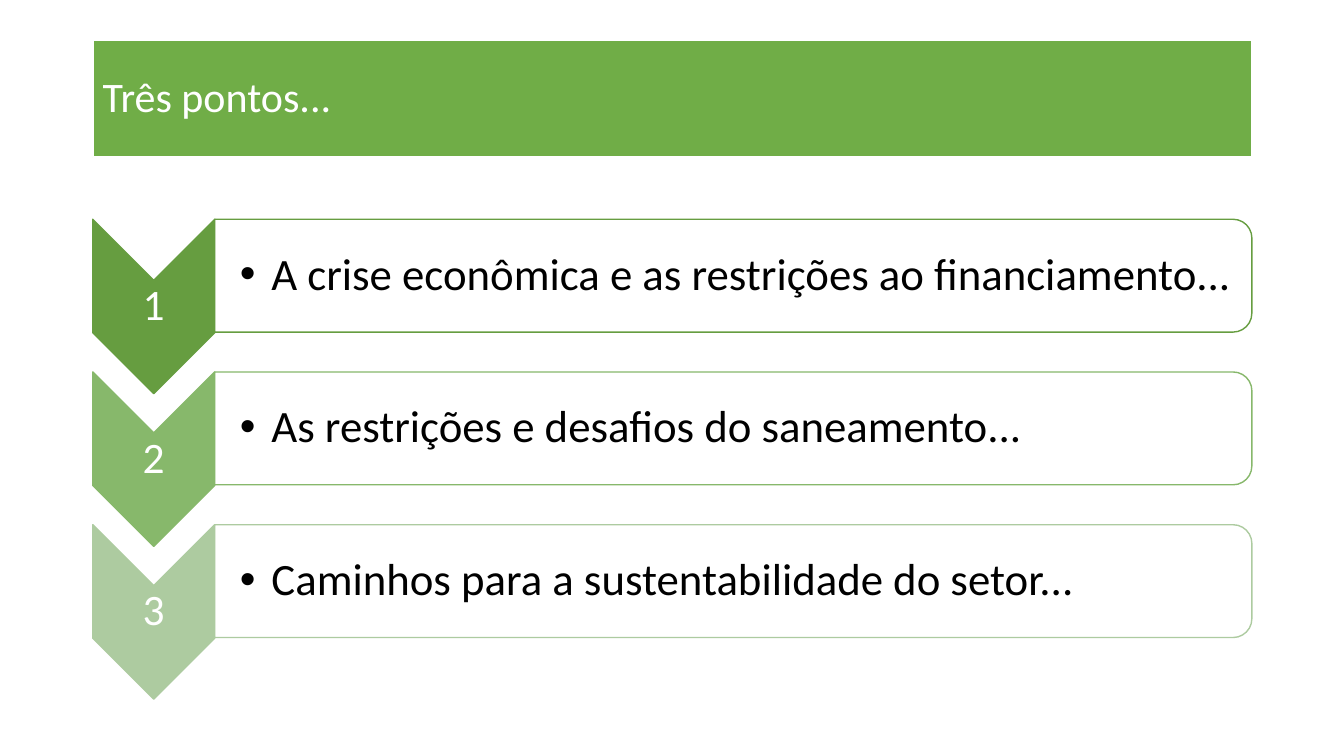
from dataclasses import dataclass

from lxml.etree import SubElement
from pptx import Presentation
from pptx.dml.color import RGBColor
from pptx.enum.shapes import MSO_SHAPE as Preset
from pptx.enum.text import MSO_ANCHOR as Anchor, MSO_AUTO_SIZE as AutoSize, PP_ALIGN as Align
from pptx.oxml.ns import qn
from pptx.util import Pt


@dataclass(frozen=True)
class Theme:
    font: str = "Calibri"
    white: str = "FFFFFF"
    black: str = "000000"
    banner: str = "70AD47"
    steps: tuple = ("669D40", "87B86B", "ADCBA0")
    title_size: int = 30
    number_size: int = 31
    point_size: int = 32
    panel_alpha: int = 90000


THEME = Theme()
TITLE = "Três pontos..."
POINTS = (
    "A crise econômica e as restrições ao financiamento...",
    "As restrições e desafios do saneamento...",
    "Caminhos para a sustentabilidade do setor...",
)
LEFT = 66.2
STEP_WIDTH = 87.2
CHEVRON_LENGTH = 124.6
PANEL_LENGTH = 740.8
PANEL_HEIGHT = 80.6
FIRST_CENTER = 196.9
PITCH = 109.1


def paint(shape, fill, line, width):
    shape.fill.solid()
    shape.fill.fore_color.rgb = RGBColor.from_string(fill)
    shape.line.color.rgb = RGBColor.from_string(line)
    shape.line.width = Pt(width)


def write(shape, text, size, color, align, margins):
    frame = shape.text_frame
    frame.text = text
    frame.word_wrap = True
    frame.auto_size = AutoSize.NONE
    frame.vertical_anchor = Anchor.MIDDLE
    left, top, right, bottom = margins
    frame.margin_left, frame.margin_top = Pt(left), Pt(top)
    frame.margin_right, frame.margin_bottom = Pt(right), Pt(bottom)
    paragraph = frame.paragraphs[0]
    paragraph.alignment = align
    paragraph.line_spacing = 0.9
    font = paragraph.runs[0].font
    font.name = THEME.font
    font.size = Pt(size)
    font.color.rgb = RGBColor.from_string(color)
    return paragraph


def add_bullet(paragraph, indent):
    properties = paragraph._p.get_or_add_pPr()
    properties.set("marL", str(Pt(indent)))
    properties.set("indent", str(-Pt(indent)))
    SubElement(properties, qn("a:buFont"), typeface="Arial")
    SubElement(properties, qn("a:buChar"), char="•")


def add_turned_shape(slide, preset, center_x, center_y, length, breadth, fill, line):
    shape = slide.shapes.add_shape(
        preset, Pt(center_x - length / 2), Pt(center_y - breadth / 2), Pt(length), Pt(breadth)
    )
    shape.rotation = 90
    shape.shadow.inherit = False
    paint(shape, fill, line, 1)
    return shape


def add_title(slide):
    title = slide.shapes.title
    title.left, title.top, title.width, title.height = Pt(LEFT), Pt(28.8), Pt(828), Pt(83.5)
    paint(title, THEME.banner, THEME.white, 1.5)
    write(title, TITLE, THEME.title_size, THEME.white, Align.LEFT, (7.2, 3.6, 7.2, 3.6))


def add_number(slide, number, center_y, color):
    center_x = LEFT + STEP_WIDTH / 2
    chevron_y = center_y + (CHEVRON_LENGTH - PANEL_HEIGHT) / 2
    add_turned_shape(slide, Preset.CHEVRON, center_x, chevron_y, CHEVRON_LENGTH, STEP_WIDTH, color, color)
    label = slide.shapes.add_textbox(Pt(LEFT), Pt(chevron_y - 18.7), Pt(STEP_WIDTH), Pt(37.4))
    write(label, str(number), THEME.number_size, THEME.white, Align.CENTER, (1.5,) * 4)


def add_point(slide, text, center_y, color):
    left = LEFT + STEP_WIDTH
    panel = add_turned_shape(
        slide, Preset.ROUND_2_SAME_RECTANGLE, left + PANEL_LENGTH / 2, center_y,
        PANEL_HEIGHT, PANEL_LENGTH, THEME.white, color,
    )
    fill_color = panel._element.spPr.find(qn("a:solidFill"))[0]
    SubElement(fill_color, qn("a:alpha"), val=str(THEME.panel_alpha))
    box = slide.shapes.add_textbox(Pt(left), Pt(center_y - 36.4), Pt(737), Pt(72.8))
    paragraph = write(box, text, THEME.point_size, THEME.black, Align.LEFT, (18, 1.5, 1.5, 1.5))
    paragraph.level = 1
    add_bullet(paragraph, 22.5)


def main():
    presentation = Presentation()
    presentation.slide_width, presentation.slide_height = Pt(960), Pt(540)
    slide = presentation.slides.add_slide(presentation.slide_layouts[5])
    add_title(slide)
    for index, (text, color) in enumerate(zip(POINTS, THEME.steps)):
        center_y = FIRST_CENTER + index * PITCH
        add_number(slide, index + 1, center_y, color)
        add_point(slide, text, center_y, color)
    presentation.save("out.pptx")


if __name__ == "__main__":
    main()
